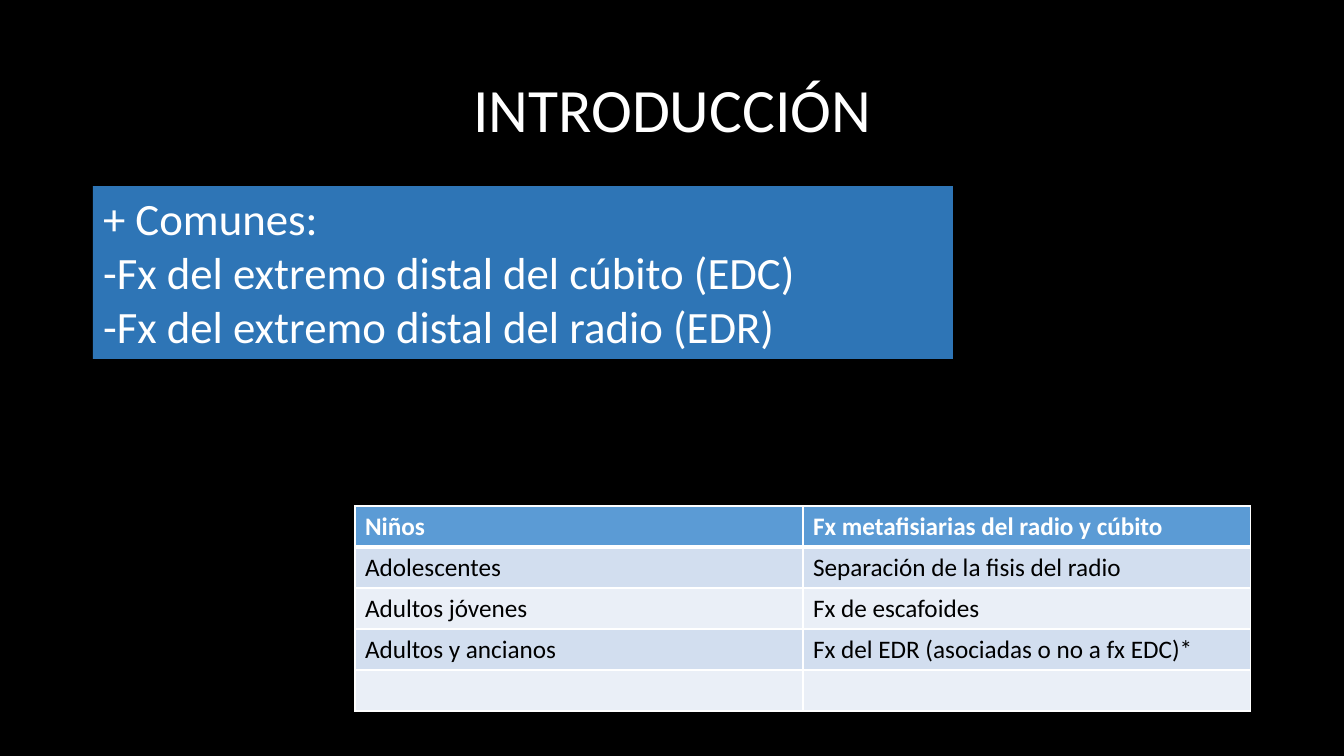
from lxml import etree
from pptx import Presentation
from pptx.dml.color import RGBColor
from pptx.enum.text import MSO_ANCHOR, MSO_AUTO_SIZE, PP_ALIGN
from pptx.oxml.ns import qn
from pptx.util import Pt

CENTER, LEFT = PP_ALIGN.CENTER, PP_ALIGN.LEFT
MIDDLE, TOP = MSO_ANCHOR.MIDDLE, MSO_ANCHOR.TOP
NO_FIT = MSO_AUTO_SIZE.NONE
PX = 914400 / 100.8
THEME = {
    "font": "Calibri",
    "background": "000000",
    "light": "FFFFFF",
    "dark": "000000",
    "panel": "2E75B6",
    "header": "5B9BD5",
    "bands": ["D2DEEF", "EAEFF7"],
    "title_size": 44,
    "list_size": 32,
    "table_size": 18,
}


def px(*lengths):
    return [round(length * PX) for length in lengths]


def write(para, text, *, size, color, bold=False, align=LEFT, spacing=1.0):
    para.alignment = align
    para.line_spacing = spacing
    para.space_before = Pt(0)
    span = para.add_run()
    span.text = text
    span.font.name = THEME["font"]
    span.font.size = Pt(size)
    span.font.bold = bold
    span.font.color.rgb = RGBColor.from_string(color)


deck = Presentation()
deck.slide_width, deck.slide_height = px(1344, 756)
page = deck.slides.add_slide(deck.slide_layouts[1])
page.background.fill.solid()
page.background.fill.fore_color.rgb = RGBColor.from_string(THEME["background"])

title = page.shapes.title
title.left, title.top, title.width, title.height = px(93, 40, 1159, 146)
title.text_frame.auto_size = NO_FIT
title.text_frame.vertical_anchor = MIDDLE
write(title.text_frame.paragraphs[0], "INTRODUCCIÓN", size=THEME["title_size"],
      color=THEME["light"], align=CENTER, spacing=0.9)

common = page.placeholders[1]
common.left, common.top, common.width, common.height = px(93, 186, 860, 173)
common.fill.solid()
common.fill.fore_color.rgb = RGBColor.from_string(THEME["panel"])
frame = common.text_frame
frame.auto_size = NO_FIT
frame.word_wrap = True
frame.vertical_anchor = TOP
common_lines = [
    "+ Comunes:",
    "-Fx del extremo distal del cúbito (EDC)",
    "-Fx del extremo distal del radio (EDR)",
]
for index, line in enumerate(common_lines):
    para = frame.add_paragraph() if index else frame.paragraphs[0]
    write(para, line, size=THEME["list_size"], color=THEME["light"])
    properties = para._p.get_or_add_pPr()
    properties.set("marL", "0")
    properties.set("indent", "0")
    etree.SubElement(properties, qn("a:buNone"))

fractures = [
    ("Niños", "Fx metafisiarias del radio y cúbito"),
    ("Adolescentes", "Separación de la fisis del radio"),
    ("Adultos jóvenes", "Fx de escafoides"),
    ("Adultos y ancianos", "Fx del EDR (asociadas o no a fx EDC)*"),
    ("", ""),
]
table = page.shapes.add_table(len(fractures), 2, *px(355, 506, 896, 205)).table
for row_index, texts in enumerate(fractures):
    is_header = row_index == 0
    fill_color = THEME["header"] if is_header else THEME["bands"][(row_index - 1) % 2]
    for column_index, text in enumerate(texts):
        cell = table.cell(row_index, column_index)
        cell.fill.solid()
        cell.fill.fore_color.rgb = RGBColor.from_string(fill_color)
        if text:
            write(cell.text_frame.paragraphs[0], text, size=THEME["table_size"],
                  color=THEME["light"] if is_header else THEME["dark"], bold=is_header)
        widths = {"lnL": 1, "lnR": 1, "lnT": 3 if row_index == 1 else 1,
                  "lnB": 3 if is_header else 1}
        cell_properties = cell._tc.get_or_add_tcPr()
        for position, (side, width) in enumerate(widths.items()):
            border = etree.Element(qn(f"a:{side}"), w=str(Pt(width)))
            solid = etree.SubElement(border, qn("a:solidFill"))
            etree.SubElement(solid, qn("a:srgbClr"), val=THEME["light"])
            cell_properties.insert(position, border)

deck.save("out.pptx")
